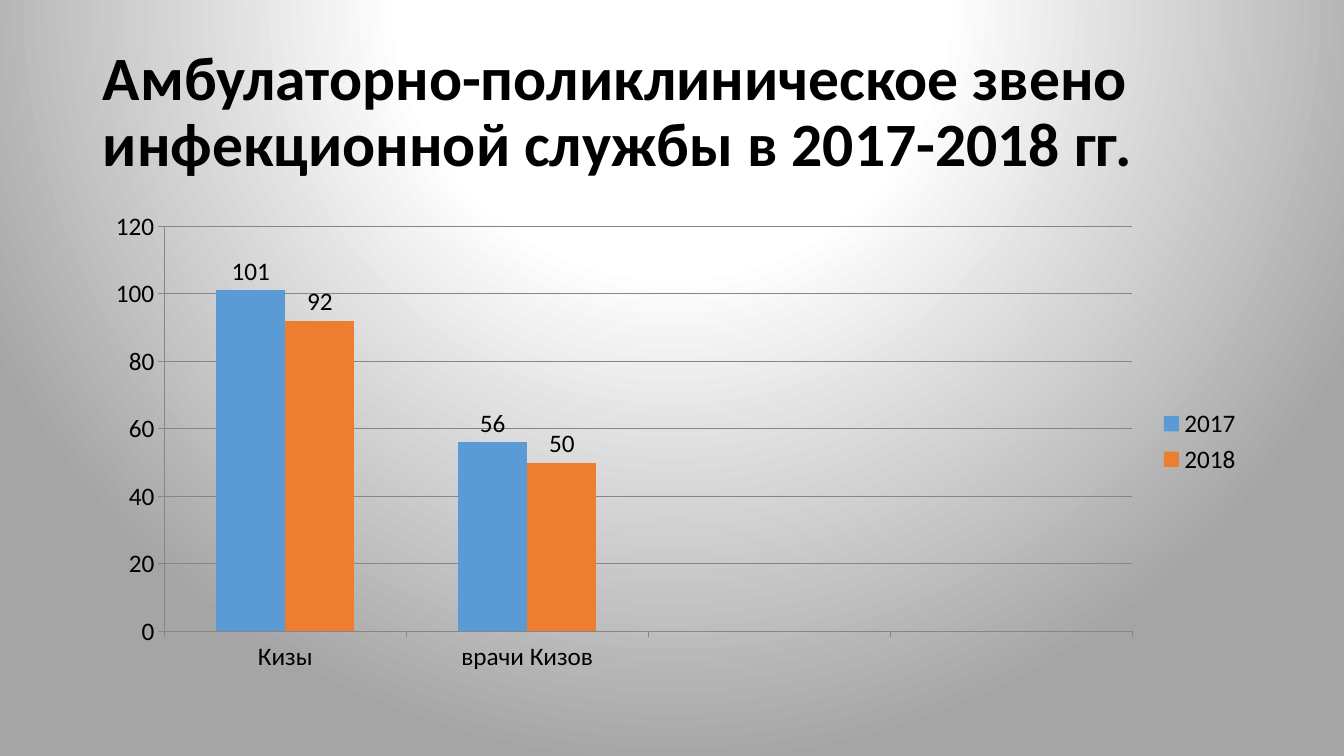
from lxml import etree
from pptx import Presentation
from pptx.chart.data import CategoryChartData
from pptx.dml.color import RGBColor
from pptx.enum.chart import XL_CHART_TYPE, XL_LABEL_POSITION, XL_LEGEND_POSITION, XL_TICK_MARK
from pptx.enum.text import MSO_ANCHOR, MSO_AUTO_SIZE, PP_ALIGN
from pptx.oxml.ns import qn
from pptx.util import Inches, Pt

# Content
TITLE_LINES = ["Амбулаторно-поликлиническое звено ", "инфекционной службы в 2017-2018 гг."]
CATEGORIES = ["Кизы", "врачи Кизов", "", ""]
SERIES = {
    "2017": (101, 56, None, None),
    "2018": (92, 50, None, None),
}

# Style
FONT = "Calibri"
COLORS = {
    "text": "000000",
    "axis": "868686",
    "2017": "5B9BD5",
    "2018": "ED7D31",
    "center": "FFFFFF",
    "edge": "A5A5A5",
}
GRADIENT_STOPS = [(0, "center"), (35, "center"), (100, "edge")]
GRADIENT_FOCUS = {"l": 50, "t": -80, "r": 50, "b": 180}
LEFT, WIDTH = Inches(0.92), Inches(11.5)


def color(name):
    return RGBColor.from_string(COLORS[name])


def format_font(font, size):
    font.name = FONT
    font.size = Pt(size)
    font.color.rgb = color("text")


def set_background(slide):
    """Fill the slide with a circular gradient."""
    slide.background.fill.solid()
    solid = next(slide.element.iter(qn("a:solidFill")))
    gradient = etree.Element(qn("a:gradFill"), rotWithShape="1")
    stops = etree.SubElement(gradient, qn("a:gsLst"))
    for position, name in GRADIENT_STOPS:
        stop = etree.SubElement(stops, qn("a:gs"), pos=str(position * 1000))
        etree.SubElement(stop, qn("a:srgbClr"), val=COLORS[name])
    circle = etree.SubElement(gradient, qn("a:path"), path="circle")
    focus = {side: str(percent * 1000) for side, percent in GRADIENT_FOCUS.items()}
    etree.SubElement(circle, qn("a:fillToRect"), focus)
    solid.getparent().replace(solid, gradient)


def add_title(slide):
    title = slide.shapes.title
    title.left, title.top, title.width, title.height = LEFT, Inches(0.4), WIDTH, Inches(1.45)
    frame = title.text_frame
    frame.word_wrap = True
    frame.auto_size = MSO_AUTO_SIZE.NONE
    frame.vertical_anchor = MSO_ANCHOR.MIDDLE
    paragraph = frame.paragraphs[0]
    paragraph.alignment = PP_ALIGN.LEFT
    paragraph.line_spacing = 0.9
    for index, line in enumerate(TITLE_LINES):
        if index:
            paragraph.add_line_break()
        run = paragraph.add_run()
        run.text = line
        run.font.bold = True
        format_font(run.font, 44)


def add_column_chart(slide):
    data = CategoryChartData()
    data.categories = CATEGORIES
    for name, values in SERIES.items():
        data.add_series(name, values)
    chart = slide.shapes.add_chart(
        XL_CHART_TYPE.COLUMN_CLUSTERED, LEFT, Inches(2), WIDTH, Inches(4.76), data
    ).chart
    chart.has_title = False
    format_font(chart.font, 18)

    # Legend
    chart.has_legend = True
    chart.legend.position = XL_LEGEND_POSITION.RIGHT
    chart.legend.include_in_layout = False

    # Axes and gridlines
    value_axis = chart.value_axis
    value_axis.minimum_scale, value_axis.maximum_scale, value_axis.major_unit = 0, 120, 20
    value_axis.has_major_gridlines = True
    for axis in (chart.category_axis, value_axis):
        axis.major_tick_mark = XL_TICK_MARK.OUTSIDE
        axis.minor_tick_mark = XL_TICK_MARK.NONE
    for part in (chart.category_axis, value_axis, value_axis.major_gridlines):
        part.format.line.color.rgb = color("axis")
        part.format.line.width = Pt(0.75)

    # Columns and value labels
    plot = chart.plots[0]
    plot.gap_width = 150
    plot.overlap = 0
    plot.vary_by_categories = False
    for series in plot.series:
        series.format.fill.solid()
        series.format.fill.fore_color.rgb = color(series.name)
        series.data_labels.show_value = True
        series.data_labels.position = XL_LABEL_POSITION.OUTSIDE_END


def main():
    presentation = Presentation()
    presentation.slide_width = Inches(13.33)
    presentation.slide_height = Inches(7.5)
    slide = presentation.slides.add_slide(presentation.slide_layouts[5])
    set_background(slide)
    add_title(slide)
    add_column_chart(slide)
    presentation.save("out.pptx")


if __name__ == "__main__":
    main()
